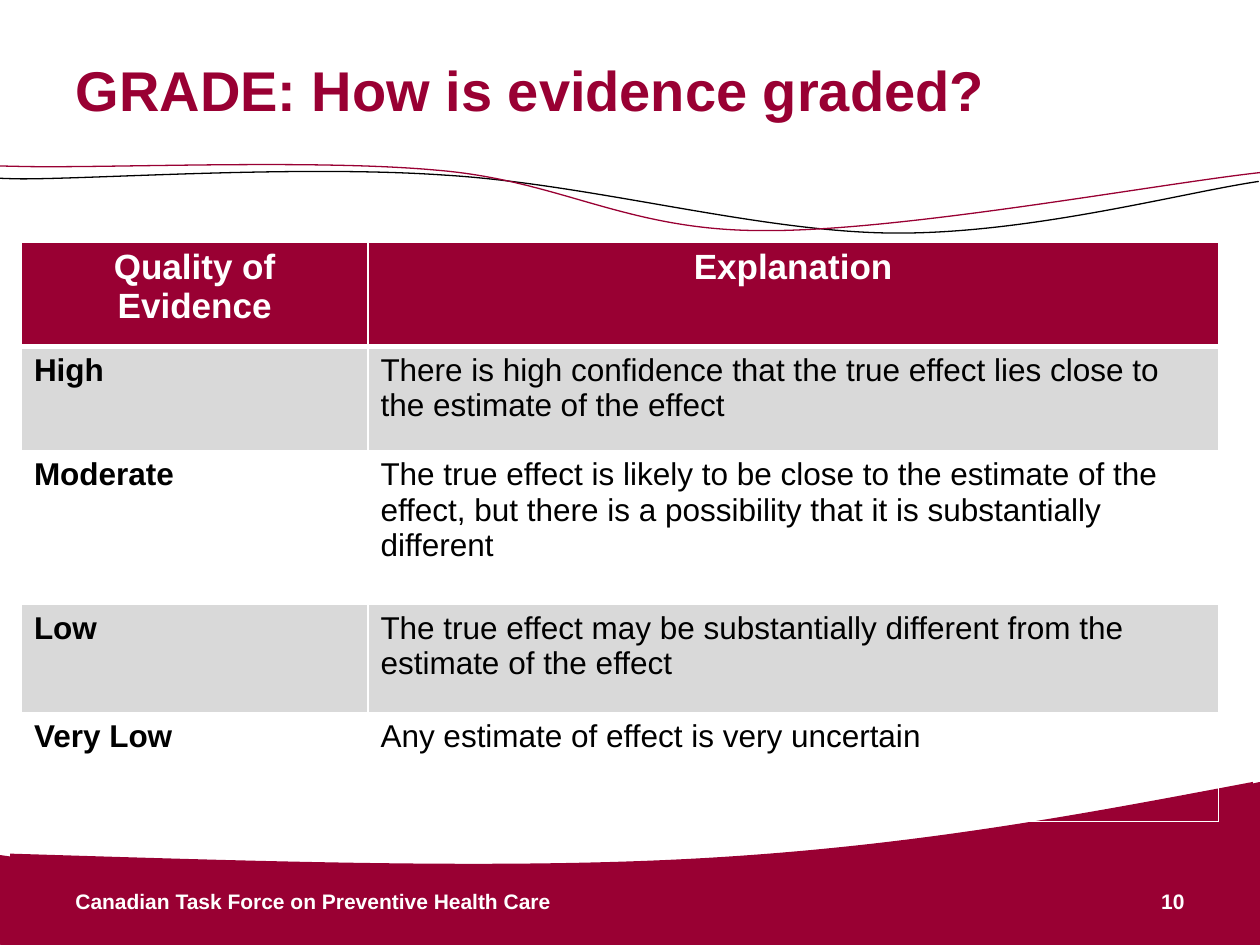
from pptx import Presentation
from pptx import util as u
from pptx.dml.color import RGBColor
from pptx.enum import text
from pptx.oxml import parse_xml
from pptx.oxml.ns import nsdecls, qn

PX = 9144
WINE = RGBColor(0x99, 0x00, 0x33)
GREY = RGBColor(0xD9, 0xD9, 0xD9)
BLACK = RGBColor(0, 0, 0)
WHITE = RGBColor(255, 255, 255)
LEFT, MID, RIGHT = text.PP_ALIGN.LEFT, text.PP_ALIGN.CENTER, text.PP_ALIGN.RIGHT


def style(frame, size, color, bold=True, align=LEFT):
    para = frame.paragraphs[0]
    para.alignment = align
    for run in para.runs:
        font = run.font
        font.name = "Arial"
        font.size = u.Pt(size)
        font.bold = bold
        font.color.rgb = color


def bend(shape, first, last):
    steps = list(shape._element.iter(qn("a:lnTo")))[first:last]
    for i in range(0, len(steps), 3):
        head, *rest = steps[i:i + 3]
        head.tag = qn("a:cubicBezTo")
        for step in rest:
            head.append(step[0])
            step.getparent().remove(step)


prs = Presentation()
prs.slide_width, prs.slide_height = 1000 * PX, 750 * PX
slide = prs.slides.add_slide(prs.slide_layouts[5])
pool = slide.shapes

black = [(-9, 134), (-4, 136), (-43, 141), (17, 142), (78, 142), (238, 131), (353, 139),
         (469, 146), (601, 184), (708, 185), (816, 186), (938, 153), (999, 144)]
red = [(-28, 125), (-22, 126), (-50, 131), (12, 132), (75, 134), (247, 126), (346, 135),
       (445, 143), (496, 183), (605, 183), (714, 184), (918, 146), (1000, 137)]
rim = [(8, 681), (205, 687), (403, 694), (567, 684), (732, 674), (863, 649), (995, 624)]
band = [(1, 749), (0, 680), (28, 684), (68, 684), (117, 686), (178, 687), (264, 689),
        (328, 690), (453, 690), (496, 687), (583, 684), (643, 678), (767, 665),
        (838, 654), (913, 639), (931, 636), (949, 629), (968, 629), (1000, 622),
        (1000, 754)]

for dots, color, width, solid in (
        (black, BLACK, 0.75, False), (red, WINE, 0.75, False),
        (rim, WINE, 5, False), (band, WINE, 2, True)):
    pen = pool.build_freeform(*dots[0], scale=PX)
    pen.add_line_segments(dots[1:], close=solid)
    wave = pen.convert_to_shape()
    wave.shadow.inherit = False
    wave.line.color.rgb = color
    wave.line.width = u.Pt(width)
    if solid:
        wave.fill.solid()
        wave.fill.fore_color.rgb = color
        bend(wave, 14, 17)
    else:
        wave.fill.background()
        bend(wave, 0, len(dots))

title = pool.title
title.left, title.top, title.width, title.height = 50 * PX, 8 * PX, 900 * PX, 125 * PX
title.text_frame.text = "GRADE: How is evidence graded?"
title.text_frame.vertical_anchor = text.MSO_ANCHOR.MIDDLE
style(title.text_frame, 32, WINE)

for words, left, width, align in (
        ("Canadian Task Force on Preventive Health Care", 50, 608, LEFT),
        ("10", 717, 233, RIGHT)):
    frame = pool.add_textbox(left * PX, 695 * PX, width * PX, 40 * PX).text_frame
    frame.word_wrap = True
    frame.vertical_anchor = text.MSO_ANCHOR.MIDDLE
    frame.text = words
    style(frame, 12, WHITE, align=align)

rows = [
    ("Quality of Evidence", "Explanation"),
    ("High", "There is high confidence that the true effect lies close to "
             "the estimate of the effect"),
    ("Moderate", "The true effect is likely to be close to the estimate of the effect, "
                 "but there is a possibility that it is substantially different"),
    ("Low", "The true effect may be substantially different from the estimate of the effect"),
    ("Very Low", "Any estimate of effect is very uncertain"),
]
grid = pool.add_table(5, 2, 17 * PX, 192 * PX, 950 * PX, 461 * PX).table
for col, width in zip(grid.columns, (275, 675)):
    col.width = width * PX
for row, high in zip(grid.rows, (83, 83, 122, 86, 86)):
    row.height = high * PX

for r, pair in enumerate(rows):
    for c, words in enumerate(pair):
        cell = grid.cell(r, c)
        props = cell._tc.get_or_add_tcPr()
        for side in "LRTB":
            thick = 3 if (r, side) in ((0, "B"), (1, "T")) else 1
            props.append(parse_xml(
                f'<a:ln{side} {nsdecls("a")} w="{thick * 12700}"><a:solidFill>'
                f'<a:srgbClr val="{WHITE}"/></a:solidFill></a:ln{side}>'))
        if r % 2 or r == 0:
            cell.fill.solid()
            cell.fill.fore_color.rgb = GREY if r else WINE
        else:
            cell.fill.background()
        cell.text_frame.text = words
        if r:
            style(cell.text_frame, 18, BLACK, bold=c == 0)
        else:
            style(cell.text_frame, 20, WHITE, align=MID)

prs.save("out.pptx")
